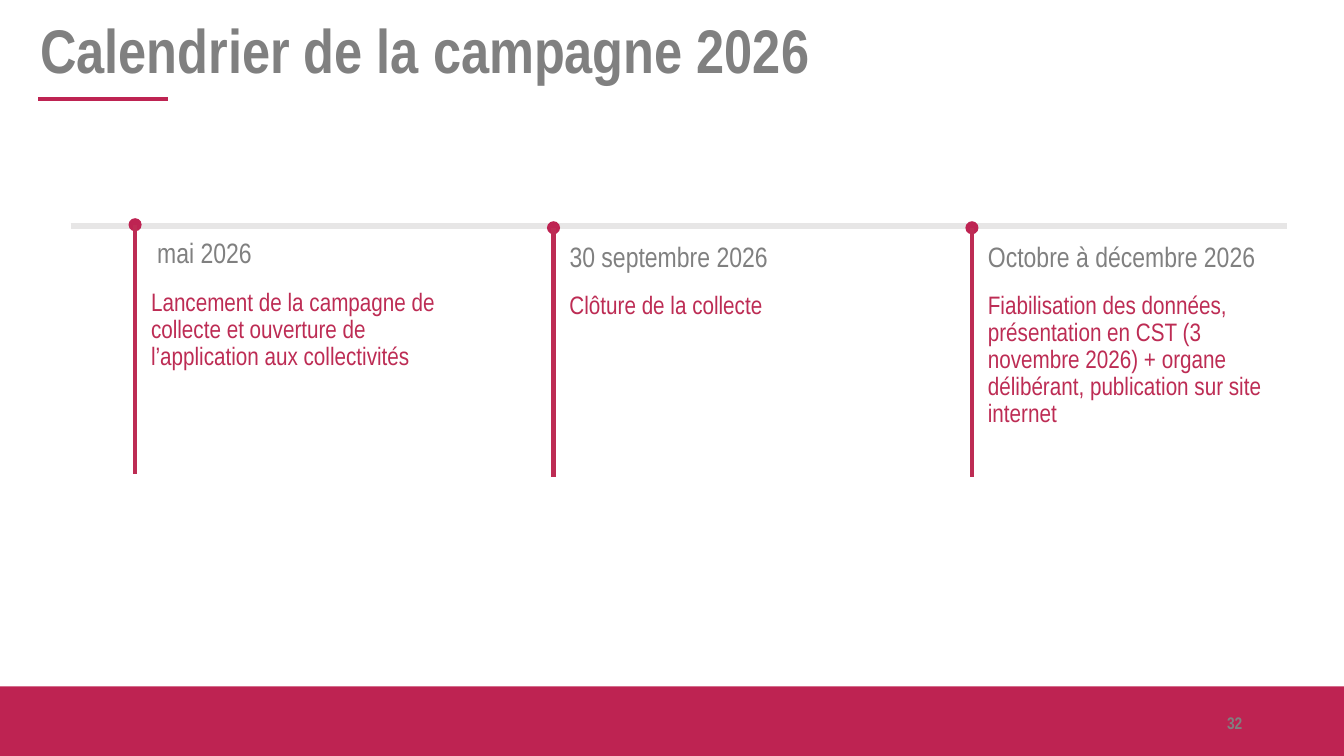
from lxml import etree
from pptx import Presentation
from pptx.dml.color import RGBColor
from pptx.enum.shapes import MSO_CONNECTOR as Connector, MSO_SHAPE as Shape
from pptx.enum.text import MSO_ANCHOR as Anchor, PP_ALIGN as Align
from pptx.oxml.ns import qn
from pptx.util import Inches, Pt

WIDTH, HEIGHT = 13.33, 7.5
FONT = "Arial Narrow"
COLORS = {"band": "BE2352", "accent": "BD2C54", "grey": "808080", "axis": "E7E6E6"}

TITLE_FORMAT = {"size": Pt(44), "bold": True}
DATE_FORMAT = {"size": Pt(20), "bold": False}
DETAIL_FORMAT = {"size": Pt(18), "bold": False}
NUMBER_FORMAT = {"size": Pt(12), "bold": True}

FIRST_COLUMN, COLUMN_STEP = 1.34, 4.15
# Date, detail, top of the stem, indent of the date
EVENTS = [
    ("mai 2026",
     "Lancement de la campagne de collecte et ouverture de l’application aux collectivités",
     2.23, 0.06),
    ("30 septembre 2026", "Clôture de la collecte", 2.26, 0),
    ("Octobre à décembre 2026",
     "Fiabilisation des données, présentation en CST (3 novembre 2026) "
     "+ organe délibérant, publication sur site internet",
     2.26, 0),
]


def rgb(name):
    return RGBColor.from_string(COLORS[name])


def add_solid(slide, kind, box, color):
    shape = slide.shapes.add_shape(kind, *map(Inches, box))
    shape.shadow.inherit = False
    shape.fill.solid()
    shape.fill.fore_color.rgb = rgb(color)
    shape.line.fill.background()


def add_line(slide, start, end, color, weight):
    line = slide.shapes.add_connector(Connector.STRAIGHT, *map(Inches, (*start, *end)))
    line.line.color.rgb = rgb(color)
    line.line.width = Pt(weight)
    properties = line._element.find(qn("p:spPr"))
    etree.SubElement(properties, qn("a:effectLst"))


def add_text(slide, box, text, color, font_format, spacing=0.9,
             align=Align.LEFT, anchor=Anchor.TOP):
    frame = slide.shapes.add_textbox(*map(Inches, box)).text_frame
    frame.word_wrap = True
    frame.vertical_anchor = anchor
    paragraph = frame.paragraphs[0]
    paragraph.alignment = align
    paragraph.line_spacing = spacing
    run = paragraph.add_run()
    run.text = text
    run.font.name = FONT
    run.font.color.rgb = rgb(color)
    for name, value in font_format.items():
        setattr(run.font, name, value)


def add_header(slide, left, top, width):
    add_text(slide, (left, top, width, 0.82), "Calendrier de la campagne 2026",
             "grey", TITLE_FORMAT)
    underline = top + 0.83
    add_line(slide, (left + 0.08, underline), (left + 1.37, underline), "band", 3)


def add_event(slide, left, top, date, detail, indent):
    """Place a dot, its stem and the two texts beside it."""
    dot = 0.13
    add_solid(slide, Shape.OVAL, (left - dot / 2, top - dot / 2, dot, dot), "band")
    add_line(slide, (left, top + 2.47), (left, top), "accent", 3)
    text_left = left + 0.06
    add_text(slide, (text_left + indent, top + 0.1, 3.58, 0.53), date, "grey", DATE_FORMAT)
    add_text(slide, (text_left, top + 0.59, 3.1, 1.68), detail, "accent", DETAIL_FORMAT)


def add_timeline(slide, left, top, width):
    add_line(slide, (left, top), (left + width, top), "axis", 4.5)
    for column, (date, detail, stem_top, indent) in enumerate(EVENTS):
        add_event(slide, FIRST_COLUMN + column * COLUMN_STEP, stem_top,
                  date, detail, indent)


def add_footer(slide, height):
    top = HEIGHT - height
    add_solid(slide, Shape.RECTANGLE, (0, top, WIDTH, height), "band")
    add_text(slide, (9.42, top + 0.16, 3, 0.4), "32", "grey", NUMBER_FORMAT,
             spacing=1.0, align=Align.RIGHT, anchor=Anchor.MIDDLE)


def main():
    presentation = Presentation()
    presentation.slide_width = Inches(WIDTH)
    presentation.slide_height = Inches(HEIGHT)
    slide = presentation.slides.add_slide(presentation.slide_layouts[6])
    add_footer(slide, 0.69)
    add_header(slide, 0.3, 0.15, 12.64)
    add_timeline(slide, 0.7, 2.24, 12.06)
    presentation.save("out.pptx")


if __name__ == "__main__":
    main()
